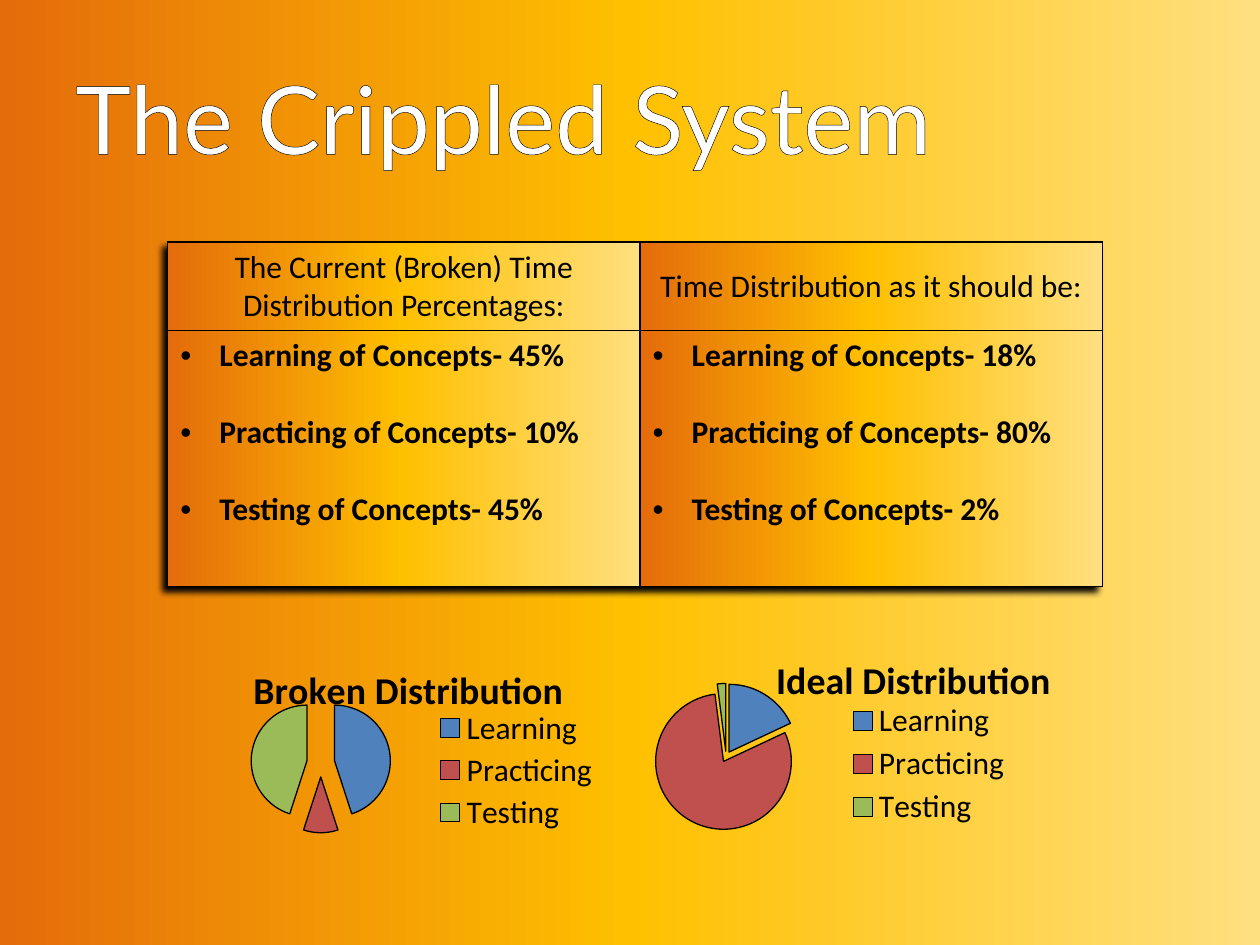
from lxml import etree
from pptx import Presentation
from pptx.chart import data
from pptx.dml.color import RGBColor
from pptx.enum import chart as kinds, text
from pptx.oxml import parse_xml, ns
from pptx.util import Cm, Pt

# Content
TITLE = "The Crippled System"
STEPS = ["Learning", "Practicing", "Testing"]
HUES = ["4F81BD", "C0504D", "9BBB59"]
STOPS = [(0, "E46C0A"), (50, "FFC000"), (100, "FFE080")]
COLS = [
    dict(head="The Current (Broken) Time Distribution Percentages:",
         space=1.0, vals=[45, 10, 45], width=9.52),
    dict(head="Time Distribution as it should be:",
         space=1.5, vals=[18, 80, 2], width=9.32),
]
# Chart frames in cm; title, legend and plot as shares of the frame
PIES = [
    dict(name="Broken Distribution", box=(3.61, 12.7, 9.07, 4.88), burst=25,
         title=(0.15, 0.11), key=(0.56, 0.31, 0.38, 0.54),
         plot=(0.16, 0.26, 0.31, 0.58)),
    dict(name="Ideal Distribution", box=(12.9, 12.7, 8.69, 4.65), burst=8,
         title=(0.3, 0.07), key=(0.47, 0.29, 0.4, 0.58),
         plot=(0.03, 0.23, 0.34, 0.64)),
]
BODY = dict(name="Calibri", size=Pt(18), bold=False)


def rgb(code):
    return RGBColor.from_string(code)


def style(font, form, hue="000000"):
    for key, val in form.items():
        setattr(font, key, val)
    font.fill.solid()
    font.fill.fore_color.rgb = rgb(hue)


def node(tag, body="", attrs=""):
    pre = tag.split(":")[0]
    names = " ".join(ns.nsdecls(p) for p in dict.fromkeys([pre, "a"]))
    return parse_xml(f"<{tag} {names} {attrs}>{body}</{tag}>")


def solid(hue):
    return f'<a:solidFill><a:srgbClr val="{hue}"/></a:solidFill>'


def blend(fill, root):
    """Give a fill the left-to-right colour blend."""
    fill.gradient()
    fill.gradient_angle = 0
    stops = root.xpath(".//a:gsLst")[0]
    for old in list(stops):
        stops.remove(old)
    for pos, hue in STOPS:
        stops.append(node("a:gs", f'<a:srgbClr val="{hue}"/>',
                          f'pos="{pos * 1000}"'))


def border(cell):
    props = cell._tc.get_or_add_tcPr()
    for spot, side in enumerate("LRTB"):
        props.insert(spot, node(f"a:ln{side}", solid("000000"), 'w="12700"'))


def bullet(par):
    props = par._p.get_or_add_pPr()
    inch = Cm(0.79)
    props.set("marL", str(inch))
    props.set("indent", str(-inch))
    props.append(node("a:buFont", attrs='typeface="Arial"'))
    props.append(node("a:buChar", attrs='char="•"'))


def place(part, spot, box, inner=False):
    """Set the manual layout of a chart part."""
    for old in part.xpath("./c:layout"):
        part.remove(old)
    body = '<c:layoutTarget val="inner"/>' if inner else ""
    body += '<c:xMode val="edge"/><c:yMode val="edge"/>'
    body += "".join(f'<c:{k} val="{v}"/>' for k, v in zip("xywh", box))
    part.insert(spot, node("c:layout", f"<c:manualLayout>{body}</c:manualLayout>"))


def add_title(slide):
    frame = slide.shapes.add_textbox(
        Cm(1.27), Cm(0.76), Cm(22.86), Cm(3.18)).text_frame
    frame.word_wrap = True
    frame.vertical_anchor = text.MSO_ANCHOR.MIDDLE
    run = frame.paragraphs[0].add_run()
    run.text = TITLE
    style(run.font, dict(name="Lato", size=Pt(54)), "FFFFFF")
    run._r.get_or_add_rPr().insert(
        0, node("a:ln", solid("000000"), 'w="19050"'))


def add_grid(slide):
    wide = sum(col["width"] for col in COLS)
    grid = slide.shapes.add_table(
        2, len(COLS), Cm(3.38), Cm(4.88), Cm(wide), Cm(6.79)).table
    grid.first_row = grid.horz_banding = False
    grid._tbl.tblPr.insert(0, node(
        "a:effectLst",
        '<a:outerShdw blurRad="50800" dist="50800" dir="8100000" algn="tr">'
        '<a:srgbClr val="000000"/></a:outerShdw>'))
    for row, high in zip(grid.rows, (1.63, 5.16)):
        row.height = Cm(high)
    for num, col in enumerate(COLS):
        grid.columns[num].width = Cm(col["width"])
        head, body = grid.cell(0, num), grid.cell(1, num)
        for cell in (head, body):
            blend(cell.fill, cell._tc)
            border(cell)
        # Heading
        par = head.text_frame.paragraphs[0]
        par.alignment = text.PP_ALIGN.CENTER
        par.line_spacing = col["space"]
        run = par.add_run()
        run.text = col["head"]
        style(run.font, BODY)
        # Bulleted shares
        for spot, (step, val) in enumerate(zip(STEPS, col["vals"])):
            frame = body.text_frame
            par = frame.add_paragraph() if spot else frame.paragraphs[0]
            par.space_after = Pt(22)
            bullet(par)
            run = par.add_run()
            run.text = f"{step} of Concepts- {val}%"
            style(run.font, BODY | dict(bold=True))


def add_pie(slide, pie, vals):
    info = data.CategoryChartData()
    info.categories = STEPS
    info.add_series("Series 1", vals)
    chart = slide.shapes.add_chart(
        kinds.XL_CHART_TYPE.PIE, *map(Cm, pie["box"]), info).chart
    style(chart.font, BODY)
    # Title
    chart.has_title = True
    run = chart.chart_title.text_frame.paragraphs[0].add_run()
    run.text = pie["name"]
    style(run.font, BODY | dict(size=Pt(21.6), bold=True))
    place(chart.chart_title._element, 1, pie["title"])
    # Legend
    chart.has_legend = True
    chart.legend.position = kinds.XL_LEGEND_POSITION.RIGHT
    chart.legend.include_in_layout = False
    style(chart.legend.font, BODY)
    place(chart.legend._element, 1, pie["key"])
    # Slices
    place(chart._chartSpace.xpath(".//c:plotArea")[0], 0, pie["plot"], True)
    chart.plots[0].vary_by_categories = True
    ser = chart.plots[0].series[0]
    ser._element.xpath("./c:tx")[0].addnext(
        node("c:explosion", attrs=f'val="{pie["burst"]}"'))
    for num, hue in enumerate(HUES):
        form = ser.points[num].format
        form.fill.solid()
        form.fill.fore_color.rgb = rgb(hue)
        form.line.color.rgb = rgb("000000")
        form.line.width = Pt(0.75)


def main():
    deck = Presentation()
    deck.slide_width, deck.slide_height = Cm(25.4), Cm(19.05)
    slide = deck.slides.add_slide(deck.slide_layouts[6])
    blend(slide.background.fill, slide.element)
    add_title(slide)
    add_grid(slide)
    for pie, col in zip(PIES, COLS):
        add_pie(slide, pie, col["vals"])
    deck.save("out.pptx")


if __name__ == "__main__":
    main()
